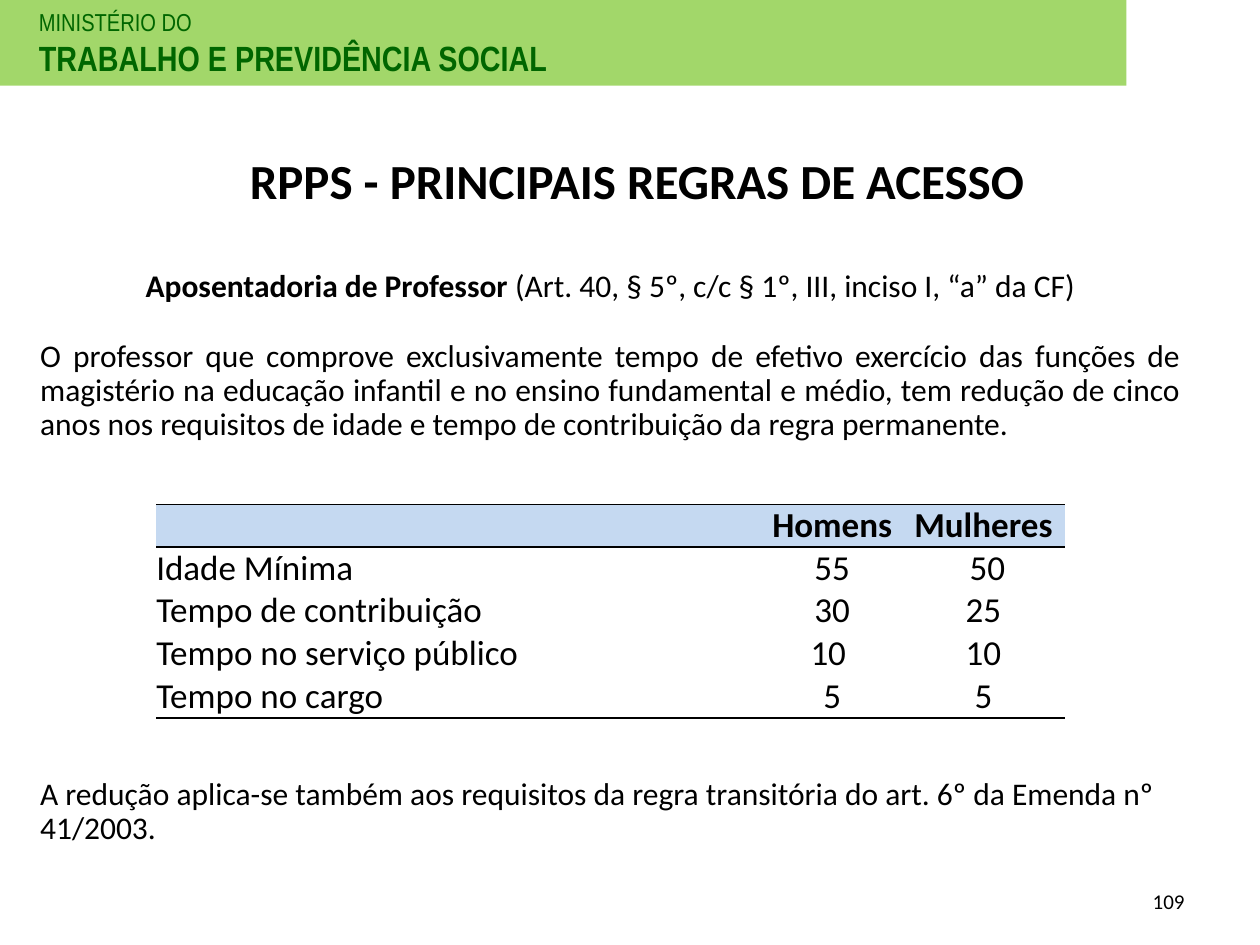
"""Build the slide on the main access rules for teachers' retirement."""
from lxml.etree import SubElement
from pptx import Presentation
from pptx.dml.color import RGBColor
from pptx.enum.shapes import MSO_SHAPE
from pptx.enum.text import MSO_ANCHOR as ANCHOR, MSO_AUTO_SIZE as AUTO, PP_ALIGN as ALIGN
from pptx.oxml.ns import qn
from pptx.util import Inches, Pt

GREEN = RGBColor(0x92, 0xD0, 0x50)
DARK_GREEN = RGBColor(0x00, 0x66, 0x00)
BLACK = RGBColor(0x00, 0x00, 0x00)
PALE_BLUE = RGBColor(0xC5, 0xD9, 0xF1)


def style(p, size, bold=False, align=ALIGN.LEFT, font="Calibri", color=BLACK):
    p.alignment = align
    p.font.size = Pt(size)
    p.font.bold = bold
    p.font.name = font
    p.font.color.rgb = color


def add_text(left, top, width, height):
    tf = slide.shapes.add_textbox(
        Inches(left), Inches(top), Inches(width), Inches(height)).text_frame
    tf.word_wrap = True
    return tf


prs = Presentation()
prs.slide_width, prs.slide_height = Inches(10), Inches(7.5)
slide = prs.slides.add_slide(prs.slide_layouts[5])

band = slide.shapes.add_shape(MSO_SHAPE.RECTANGLE, 0, 0, Inches(8.94), Inches(0.68))
band.shadow.inherit = False
band.fill.solid()
band.fill.fore_color.rgb = GREEN
band.line.fill.background()
color = band.fill._xPr.find(qn("a:solidFill"))[0]
SubElement(color, qn("a:alpha"), val="85000")

tf = add_text(0.21, 0.01, 5.75, 0.67)
tf.text = "MINISTÉRIO DO\nTRABALHO E PREVIDÊNCIA SOCIAL"
for p, size, bold in zip(tf.paragraphs, (14, 20), (False, True)):
    style(p, size, bold, font="Arial Narrow", color=DARK_GREEN)

title = slide.shapes.title
title.left, title.top = Inches(1.66), Inches(1.07)
title.width, title.height = Inches(6.79), Inches(0.71)
tf = title.text_frame
tf.text = "RPPS - PRINCIPAIS REGRAS DE ACESSO"
tf.vertical_anchor = ANCHOR.MIDDLE
tf.auto_size = AUTO.NONE
style(tf.paragraphs[0], 28, True, ALIGN.CENTER)

tf = add_text(0.22, 2.1, 9.25, 1.6)
p = tf.paragraphs[0]
style(p, 18, align=ALIGN.CENTER)
p.line_spacing = 0.9
r = p.add_run()
r.text = "Aposentadoria de Professor"
r.font.bold = True
p.add_run().text = " (Art. 40, § 5º, c/c § 1º, III, inciso I, “a” da CF)"
p = tf.add_paragraph()
p.text = (
    "O professor que comprove exclusivamente tempo de efetivo exercício das "
    "funções de magistério na educação infantil e no ensino fundamental e médio, "
    "tem redução de cinco anos nos requisitos de idade e tempo de contribuição "
    "da regra permanente.")
style(p, 18, align=ALIGN.JUSTIFY)
p.line_spacing = 0.9
p.space_before = Pt(20)

rows = [
    ("", "Homens", "Mulheres"),
    ("Idade Mínima", "55", " 50"),
    ("Tempo de contribuição", "30", "25"),
    ("Tempo no serviço público", "10 ", "10"),
    ("Tempo no cargo", "5", "5"),
]
widths = (4.81, 1.11, 1.29)
table = slide.shapes.add_table(
    len(rows), len(widths), Inches(1.24), Inches(4), Inches(sum(widths)), Inches(1.7)).table
table.first_row = table.horz_banding = False
for column, width in zip(table.columns, widths):
    column.width = Inches(width)
for i, row in enumerate(rows):
    table.rows[i].height = Inches(0.34)
    borders = {
        "L": 0,
        "R": 0,
        "T": {0: 0.5, 1: 1}.get(i, 0),
        "B": 1 if i in (0, len(rows) - 1) else 0,
    }
    for j, text in enumerate(row):
        cell = table.cell(i, j)
        cell.margin_left = cell.margin_right = cell.margin_top = cell.margin_bottom = 0
        cell.vertical_anchor = ANCHOR.BOTTOM
        cell.text = text
        style(cell.text_frame.paragraphs[0], 20, i == 0, ALIGN.CENTER if j else ALIGN.LEFT)
        for side, weight in borders.items():
            ln = SubElement(cell._tc.get_or_add_tcPr(), qn(f"a:ln{side}"), w=str(Pt(weight)))
            if weight:
                fill = SubElement(ln, qn("a:solidFill"))
                SubElement(fill, qn("a:srgbClr"), val=str(BLACK))
            else:
                SubElement(ln, qn("a:noFill"))
        if i == 0:
            cell.fill.solid()
            cell.fill.fore_color.rgb = PALE_BLUE
        else:
            cell.fill.background()

tf = add_text(0.22, 6.13, 9.25, 0.78)
tf.text = (
    "A redução aplica-se também aos requisitos da regra transitória do art. 6º "
    "da Emenda nº 41/2003.")
style(tf.paragraphs[0], 18)
tf.paragraphs[0].line_spacing = 0.9

tf = add_text(7.17, 6.95, 2.33, 0.4)
tf.text = "109"
tf.vertical_anchor = ANCHOR.MIDDLE
style(tf.paragraphs[0], 12, align=ALIGN.RIGHT)

prs.save("out.pptx")
